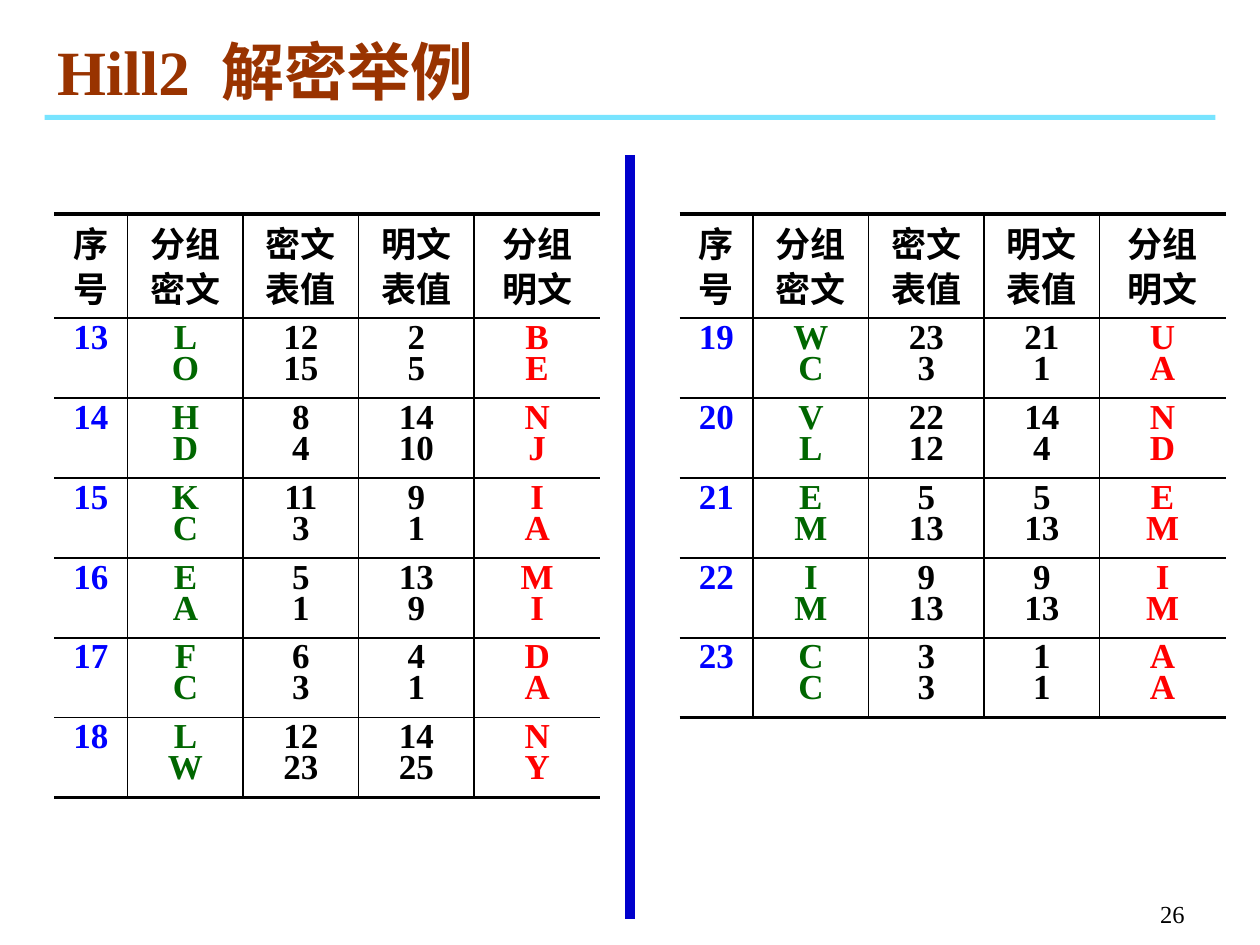
from lxml import etree
from pptx import Presentation
from pptx.dml.color import RGBColor
from pptx.enum.shapes import MSO_CONNECTOR, MSO_SHAPE
from pptx.enum.text import MSO_ANCHOR, PP_ALIGN
from pptx.oxml.ns import qn
from pptx.util import Pt

STRAIGHT = MSO_CONNECTOR.STRAIGHT
RECTANGLE = MSO_SHAPE.RECTANGLE
BOTTOM = MSO_ANCHOR.BOTTOM
LEFT, CENTER, RIGHT = PP_ALIGN.LEFT, PP_ALIGN.CENTER, PP_ALIGN.RIGHT

BLACK = RGBColor(0x00, 0x00, 0x00)
BLUE = RGBColor(0x00, 0x00, 0xFF)
GREEN = RGBColor(0x00, 0x66, 0x00)
RED = RGBColor(0xFF, 0x00, 0x00)
BROWN = RGBColor(0x99, 0x33, 0x00)
CYAN = RGBColor(0x00, 0xCC, 0xFF)
NAVY = RGBColor(0x00, 0x00, 0xCC)

FONT = "Times New Roman"
THIN, THICK = 1, 2.25

# Table layout and contents: every cell is a tuple of its lines
COLUMN_WIDTHS = (42, 66, 66, 66, 72)
COLUMN_COLORS = (BLUE, GREEN, BLACK, BLACK, RED)
HEADER_HEIGHT, ROW_HEIGHT = 59.4, 42.7
HEADER = (("序号",), ("分组", "密文"), ("密文", "表值"), ("明文", "表值"), ("分组", "明文"))

# Cipher letters, cipher values, plain values, plain letters
FIRST_GROUPS = (
    ("LO", (12, 15), (2, 5), "BE"),
    ("HD", (8, 4), (14, 10), "NJ"),
    ("KC", (11, 3), (9, 1), "IA"),
    ("EA", (5, 1), (13, 9), "MI"),
    ("FC", (6, 3), (4, 1), "DA"),
    ("LW", (12, 23), (14, 25), "NY"),
)
SECOND_GROUPS = (
    ("WC", (23, 3), (21, 1), "UA"),
    ("VL", (22, 12), (14, 4), "ND"),
    ("EM", (5, 13), (5, 13), "EM"),
    ("IM", (9, 13), (9, 13), "IM"),
    ("CC", (3, 3), (1, 1), "AA"),
)


def style_font(paragraph, size, color, bold):
    font = paragraph.font
    font.name = FONT
    font.size = Pt(size)
    font.bold = bold
    font.color.rgb = color


def add_text(slide, left, top, width, height, runs, size, color, bold, alignment):
    shape = slide.shapes.add_textbox(Pt(left), Pt(top), Pt(width), Pt(height))
    frame = shape.text_frame
    frame.word_wrap = True
    frame.vertical_anchor = BOTTOM
    paragraph = frame.paragraphs[0]
    paragraph.alignment = alignment
    style_font(paragraph, size, color, bold)
    for text in runs:
        paragraph.add_run().text = text
    return paragraph


def add_title_rule(slide):
    shape = slide.shapes.add_shape(RECTANGLE, Pt(25.5), Pt(65.7), Pt(669), Pt(2.9))
    shape.shadow.inherit = False
    shape.line.fill.background()
    shape.fill.solid()
    shape.fill.fore_color.rgb = CYAN
    color = shape.fill._xPr.find(".//" + qn("a:srgbClr"))
    etree.SubElement(color, qn("a:alpha"), val="53000")


def add_divider(slide):
    line = slide.shapes.add_connector(STRAIGHT, Pt(360), Pt(88.5), Pt(360), Pt(525))
    line.line.color.rgb = NAVY
    line.line.width = Pt(6)
    etree.SubElement(line._element.spPr, qn("a:effectLst"))


def set_border(cell, side, width):
    """Draw one side of a cell, or clear it when the width is 0."""
    properties = cell._tc.get_or_add_tcPr()
    line = etree.SubElement(properties, qn("a:ln" + side), w=str(Pt(width)))
    if width:
        fill = etree.SubElement(line, qn("a:solidFill"))
        etree.SubElement(fill, qn("a:srgbClr"), val=str(BLACK))
    else:
        etree.SubElement(line, qn("a:noFill"))


def fill_cell(cell, lines, color, spacing):
    frame = cell.text_frame
    frame.text = "\n".join(str(line) for line in lines)
    for paragraph in frame.paragraphs:
        paragraph.alignment = CENTER
        paragraph.line_spacing = spacing
        style_font(paragraph, 20, color, True)


def add_group_table(slide, left, first_number, groups):
    rows = [HEADER]
    rows += [((number,), *group) for number, group in enumerate(groups, first_number)]
    last_row, last_column = len(rows) - 1, len(COLUMN_WIDTHS) - 1
    height = HEADER_HEIGHT + ROW_HEIGHT * last_row
    table = slide.shapes.add_table(
        len(rows), len(COLUMN_WIDTHS), Pt(left), Pt(122.4),
        Pt(sum(COLUMN_WIDTHS)), Pt(height)).table
    table.first_row = False
    table.horz_banding = False
    for column, width in zip(table.columns, COLUMN_WIDTHS):
        column.width = Pt(width)

    for i, row in enumerate(rows):
        table.rows[i].height = Pt(ROW_HEIGHT if i else HEADER_HEIGHT)
        for j, lines in enumerate(row):
            cell = table.cell(i, j)
            fill_cell(cell, lines, COLUMN_COLORS[j] if i else BLACK, 0.8 if i else 0.9)
            # Open at the outer sides, thick at top and bottom
            set_border(cell, "L", THIN if j else 0)
            set_border(cell, "R", THIN if j < last_column else 0)
            set_border(cell, "T", THIN if i else THICK)
            set_border(cell, "B", THIN if i < last_row else THICK)
            cell.fill.background()


def main():
    presentation = Presentation()
    presentation.slide_width = Pt(720)
    presentation.slide_height = Pt(540)
    slide = presentation.slides.add_slide(presentation.slide_layouts[6])

    # Title, with a widened space between its two parts
    add_title_rule(slide)
    title = add_text(slide, 25.5, 15, 436, 50.5, ("Hill2", " ", "解密举例"),
                     36, BROWN, True, LEFT)
    title.runs[1].font._element.set("spc", "900")

    # Two tables on either side of the divider
    add_group_table(slide, 31, 13, FIRST_GROUPS)
    add_group_table(slide, 388.4, 19, SECOND_GROUPS)
    add_divider(slide)

    # Page number
    add_text(slide, 534, 498, 150, 36, ("26",), 14, BLACK, False, RIGHT)

    presentation.save("out.pptx")


if __name__ == "__main__":
    main()
